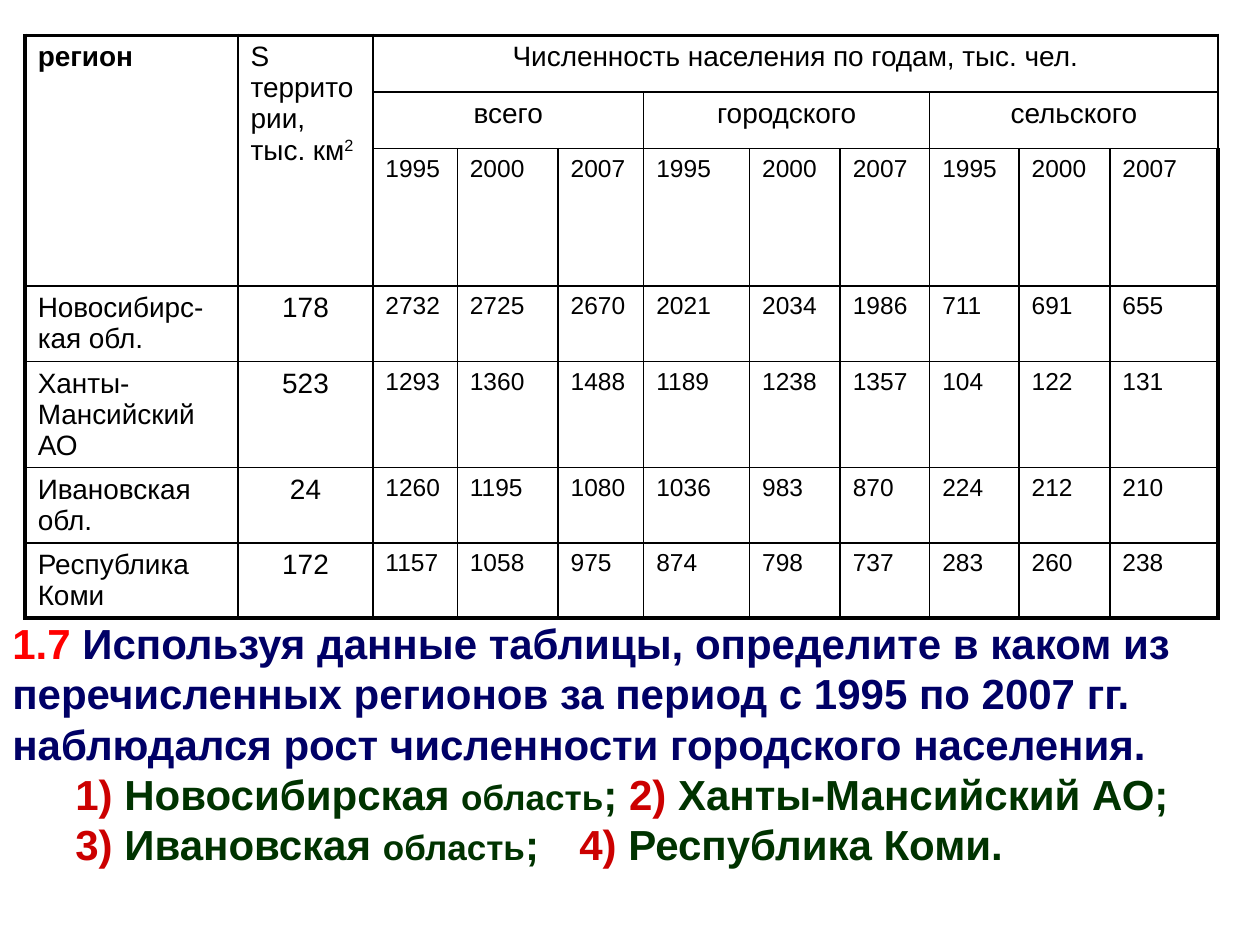
from pptx import Presentation
from pptx.dml.color import RGBColor
from pptx.enum.text import MSO_AUTO_SIZE, PP_ALIGN
from pptx.oxml.xmlchemy import OxmlElement
from pptx.util import Inches, Pt

BLACK = RGBColor(0x00, 0x00, 0x00)
RED = RGBColor(0xFF, 0x00, 0x00)
NAVY = RGBColor(0x00, 0x00, 0x66)
CRIMSON = RGBColor(0xCC, 0x00, 0x00)
GREEN = RGBColor(0x00, 0x33, 0x00)
FONT = "Arial"
THIN, THICK = 1, 2.25

YEARS = ["1995", "2000", "2007"]
GROUPS = ["всего", "городского", "сельского"]
HEADING = "Численность населения по годам, тыс. чел."
REGIONS = [
    ("Новосибирс-кая обл.", 178, 2732, 2725, 2670, 2021, 2034, 1986, 711, 691, 655),
    ("Ханты-Мансийский АО", 523, 1293, 1360, 1488, 1189, 1238, 1357, 104, 122, 131),
    ("Ивановская обл.", 24, 1260, 1195, 1080, 1036, 983, 870, 224, 212, 210),
    ("Республика Коми", 172, 1157, 1058, 975, 874, 798, 737, 283, 260, 238),
]
COLUMN_WIDTHS = [1.69, 1.07, 0.67, 0.8, 0.68, 0.84, 0.72, 0.71, 0.71, 0.72, 0.86]
ROW_HEIGHTS = [0.45, 0.45, 1.09, 0.6, 0.84, 0.6, 0.59]
HEADER_ROWS = 3
FIRST_YEAR_COLUMN = 2

QUESTION = [
    (0, [("1.7", RED, 24),
         (" Используя данные таблицы, определите в каком из перечисленных регионов "
          "за период с 1995 по 2007 гг. наблюдался рост численности городского населения.",
          NAVY, 24)]),
    (1, [("1)", CRIMSON, 24), (" Новосибирская ", GREEN, 24), ("область", GREEN, 20),
         ("; ", GREEN, 24), ("2)", CRIMSON, 24), (" Ханты-Мансийский АО;", GREEN, 24)]),
    (1, [("3)", CRIMSON, 24), (" Ивановская ", GREEN, 24), ("область", GREEN, 20),
         (";\t", GREEN, 24), ("4) ", CRIMSON, 24), ("Республика Коми.", GREEN, 24)]),
]
OPTION_INDENT = 0.5
OPTION_TAB = 4.92


def style(font, size, color, bold=False):
    font.name = FONT
    font.size = Pt(size)
    font.bold = bold
    font.color.rgb = color


def add_borders(cell, widths):
    properties = cell._tc.get_or_add_tcPr()
    for position, (side, width) in enumerate(widths.items()):
        line = OxmlElement(f"a:ln{side}")
        line.set("w", str(Pt(width)))
        fill = OxmlElement("a:solidFill")
        color = OxmlElement("a:srgbClr")
        color.set("val", str(BLACK))
        fill.append(color)
        line.append(fill)
        properties.insert(position, line)


def write_cell(cell, text, size, centered=False, bold=False):
    cell.text_frame.text = str(text)
    para = cell.text_frame.paragraphs[0]
    para.alignment = PP_ALIGN.CENTER if centered else PP_ALIGN.LEFT
    for span in para.runs:
        style(span.font, size, BLACK, bold)


def add_population_table(page):
    row_count, column_count = len(ROW_HEIGHTS), len(COLUMN_WIDTHS)
    frame = page.shapes.add_table(row_count, column_count, Inches(0.2), Inches(0.28),
                                  Inches(sum(COLUMN_WIDTHS)), Inches(sum(ROW_HEIGHTS)))
    table = frame.table
    table.first_row = table.horz_banding = False
    for column, width in zip(table.columns, COLUMN_WIDTHS):
        column.width = Inches(width)
    for row, height in zip(table.rows, ROW_HEIGHTS):
        row.height = Inches(height)

    for r in range(row_count):
        for c in range(column_count):
            cell = table.cell(r, c)
            cell.fill.background()
            add_borders(cell, {
                "L": THICK if c == 0 else THIN,
                "R": THICK if c == column_count - 1 else THIN,
                "T": THICK if r == 0 else THIN,
                "B": THICK if r == row_count - 1 else THIN,
            })

    for c in range(FIRST_YEAR_COLUMN):
        table.cell(0, c).merge(table.cell(HEADER_ROWS - 1, c))
    table.cell(0, FIRST_YEAR_COLUMN).merge(table.cell(0, column_count - 1))
    write_cell(table.cell(0, 0), "регион", 16, bold=True)
    area = table.cell(0, 1)
    write_cell(area, "S территории, тыс. км", 16)
    square = area.text_frame.paragraphs[0].add_run()
    square.text = "2"
    style(square.font, 16, BLACK)
    square.font._element.set("baseline", "30000")
    write_cell(table.cell(0, FIRST_YEAR_COLUMN), HEADING, 16, centered=True)

    for g, group in enumerate(GROUPS):
        start = FIRST_YEAR_COLUMN + g * len(YEARS)
        table.cell(1, start).merge(table.cell(1, start + len(YEARS) - 1))
        write_cell(table.cell(1, start), group, 16, centered=True)
        for offset, year in enumerate(YEARS):
            write_cell(table.cell(2, start + offset), year, 14)

    for r, values in enumerate(REGIONS, HEADER_ROWS):
        for c, value in enumerate(values):
            size = 16 if c < FIRST_YEAR_COLUMN else 14
            write_cell(table.cell(r, c), value, size, centered=c == 1)


def indent_option(para):
    properties = para._p.get_or_add_pPr()
    properties.set("marL", str(Inches(OPTION_INDENT)))
    properties.set("indent", "0")
    tabs = OxmlElement("a:tabLst")
    tab = OxmlElement("a:tab")
    tab.set("pos", str(Inches(OPTION_TAB)))
    tab.set("algn", "l")
    tabs.append(tab)
    properties.append(tabs)


def add_question(page):
    box = page.shapes.add_textbox(Inches(0), Inches(4.85), Inches(10), Inches(2.1))
    frame = box.text_frame
    frame.word_wrap = True
    frame.auto_size = MSO_AUTO_SIZE.SHAPE_TO_FIT_TEXT
    for index, (level, spans) in enumerate(QUESTION):
        para = frame.add_paragraph() if index else frame.paragraphs[0]
        para.level = level
        if level:
            indent_option(para)
        for text, color, size in spans:
            span = para.add_run()
            span.text = text
            style(span.font, size, color, bold=True)


def main():
    deck = Presentation()
    deck.slide_width, deck.slide_height = Inches(10), Inches(7.5)
    page = deck.slides.add_slide(deck.slide_layouts[6])
    add_population_table(page)
    add_question(page)
    deck.save("out.pptx")


if __name__ == "__main__":
    main()
